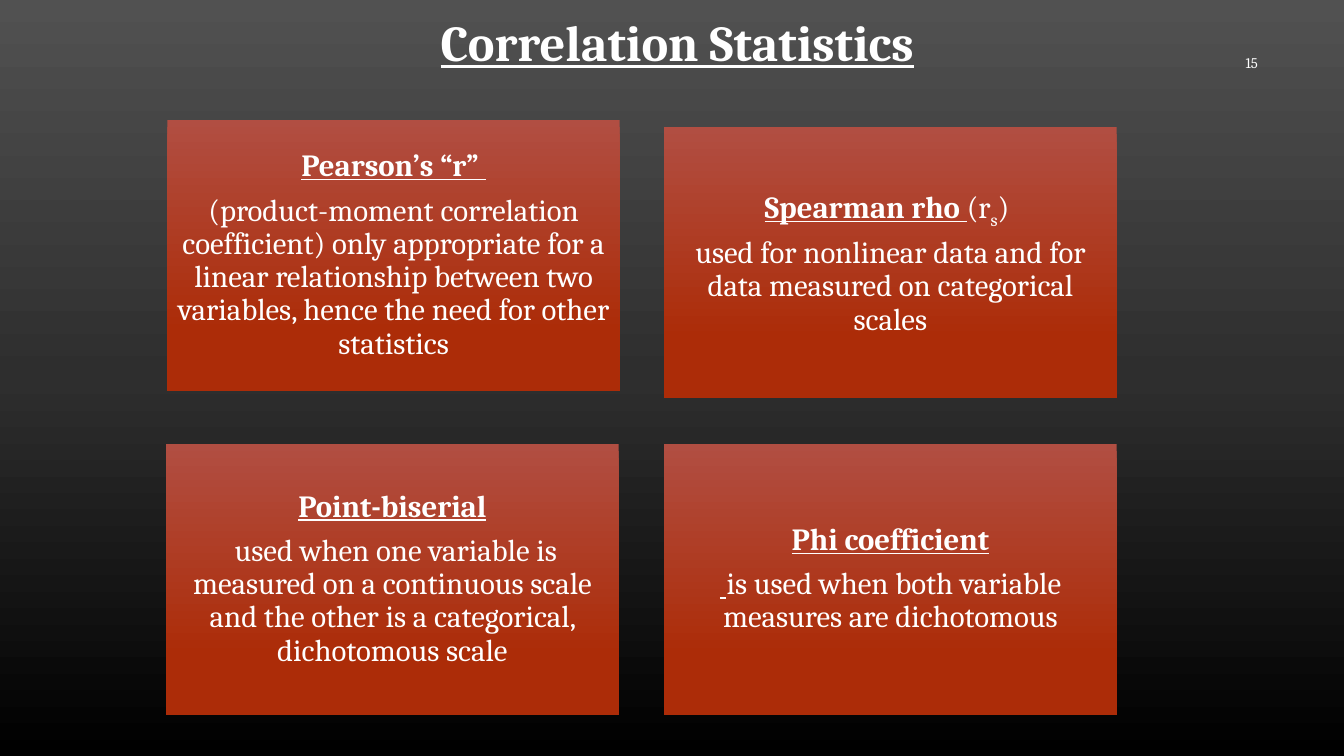
"""Build the slide comparing four correlation statistics."""
from copy import deepcopy

from pptx import Presentation
from pptx.dml.color import RGBColor
from pptx.enum.shapes import MSO_SHAPE
from pptx.enum.text import MSO_ANCHOR, MSO_AUTO_SIZE, PP_ALIGN
from pptx.oxml.ns import qn
from pptx.util import Cm, Pt

RECTANGLE = MSO_SHAPE.RECTANGLE
TOP, MIDDLE = MSO_ANCHOR.TOP, MSO_ANCHOR.MIDDLE
NO_FIT = MSO_AUTO_SIZE.NONE
CENTER, RIGHT = PP_ALIGN.CENTER, PP_ALIGN.RIGHT

CARD_WIDTH, CARD_HEIGHT, CARD_INSET = Cm(11.4), Cm(6.83), Cm(0.23)
HEADING = {"bold": True, "underline": True}


def write(paragraph, text, size=22, bold=False, underline=False, baseline=None):
    run = paragraph.add_run()
    run.text = text
    font = run.font
    font.name, font.size = "Cambria", Pt(size)
    font.bold, font.underline = bold, underline
    font.color.rgb = RGBColor.from_string("FFFFFF")
    if baseline:
        font._element.set("baseline", str(baseline))


def shade(fill, element, stops):
    fill.gradient()
    fill.gradient_angle = 270
    stop_list = element.find(".//" + qn("a:gsLst"))
    for _ in stops[2:]:
        stop_list.append(deepcopy(stop_list[0]))
    for stop, (position, color) in zip(fill.gradient_stops, stops):
        stop.position = position
        stop.color.rgb = RGBColor.from_string(color)


presentation = Presentation()
presentation.slide_width, presentation.slide_height = Cm(33.87), Cm(19.05)
slide = presentation.slides.add_slide(presentation.slide_layouts[5])
shade(slide.background.fill, slide._element,
      [(0, "515151"), (0.5, "2E2E2E"), (1, "000000")])

title = slide.shapes.title
title.left, title.top, title.width, title.height = Cm(3.5), Cm(0.15), Cm(27.13), Cm(2.82)
title.text_frame.auto_size = NO_FIT
title.text_frame.vertical_anchor = TOP
title_line = title.text_frame.paragraphs[0]
title_line.alignment = CENTER
write(title_line, "Correlation Statistics", size=36, **HEADING)

page_number = slide.shapes.add_textbox(Cm(24.33), Cm(1.07), Cm(7.62), Cm(1.02)).text_frame
page_number.word_wrap = True
page_number.vertical_anchor = MIDDLE
page_number.paragraphs[0].alignment = RIGHT
write(page_number.paragraphs[0], "15", size=10.5)

statistics = [
    (4.22, 3.02,
     [("Pearson’s “r” ", HEADING)],
     [("(product-moment correlation coefficient) only appropriate for a linear "
       "relationship between two variables, hence the need for other statistics", {})]),
    (16.74, 3.2,
     [("Spearman rho ", HEADING), ("(r", {}), ("s", {"baseline": -25000}), (") ", {})],
     [("used for nonlinear data and for data measured on categorical scales", {})]),
    (4.19, 11.18,
     [("Point-biserial", HEADING)],
     [(" ", {"bold": True}),
      ("used when one variable is measured on a continuous scale and the other "
       "is a categorical, dichotomous scale", {})]),
    (16.74, 11.18,
     [("Phi coefficient", HEADING)],
     [(" ", HEADING), ("is used when both variable measures are dichotomous", {})]),
]

for left, top, heading, description in statistics:
    card = slide.shapes.add_shape(RECTANGLE, Cm(left), Cm(top), CARD_WIDTH, CARD_HEIGHT)
    card.shadow.inherit = False
    card.line.fill.background()
    shade(card.fill, card._element, [(0, "B14E42"), (0.78, "AC2C08")])
    frame = card.text_frame
    frame.word_wrap = True
    frame.vertical_anchor = MIDDLE
    frame.margin_left = frame.margin_right = CARD_INSET
    frame.margin_top = frame.margin_bottom = CARD_INSET
    for paragraph, pieces in ((frame.paragraphs[0], heading),
                              (frame.add_paragraph(), description)):
        paragraph.alignment = CENTER
        paragraph.line_spacing = 0.9
        paragraph.space_after = Pt(8)
        for text, style in pieces:
            write(paragraph, text, **style)

presentation.save("out.pptx")
